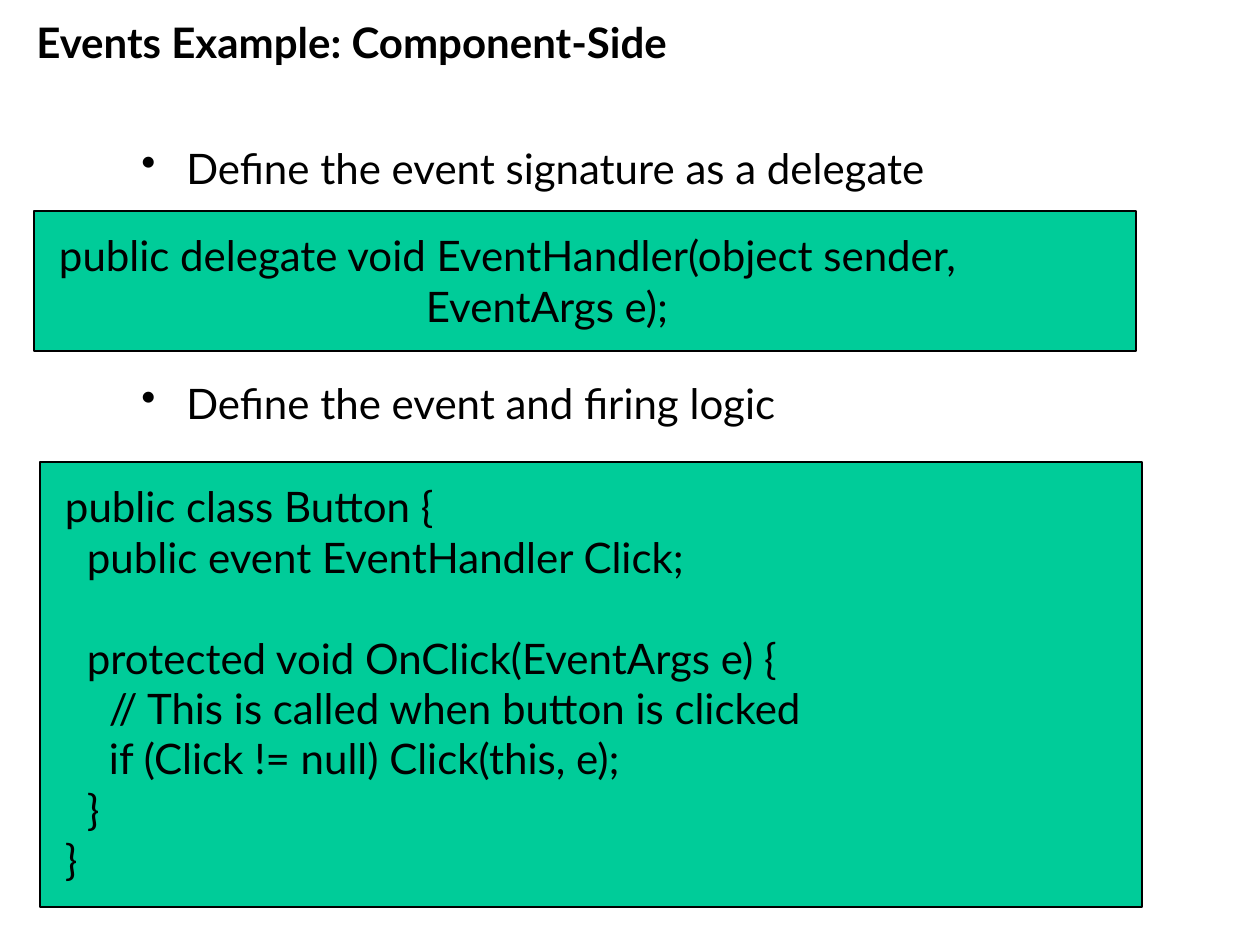
from dataclasses import dataclass

from lxml import etree
from pptx import Presentation
from pptx.dml.color import RGBColor
from pptx.enum.shapes import MSO_SHAPE
from pptx.enum.text import MSO_ANCHOR, PP_ALIGN
from pptx.oxml.ns import qn
from pptx.util import Pt

RECTANGLE = MSO_SHAPE.RECTANGLE
TOP = MSO_ANCHOR.TOP
LEFT = PP_ALIGN.LEFT
EMU_PER_PX = 914400 / 126


@dataclass(frozen=True)
class Theme:
    font: str = "Lato"
    size: int = 24
    line_height: float = 28.8
    ink: RGBColor = RGBColor(0x00, 0x00, 0x00)
    code_fill: RGBColor = RGBColor(0x00, 0xCC, 0x99)
    border: int = 1


THEME = Theme()
CODE_STEP = 22  # one level of code indentation
ARGUMENT_INDENT = 367  # continuation line of the delegate signature
BULLET_INDENT, BULLET_HANG = 48, -45

# Code lines: (indent in px, blank lines above, text)
DELEGATE_CODE = [
    (0, 0, "public delegate void EventHandler(object sender,"),
    (ARGUMENT_INDENT, 0, "EventArgs e);"),
]
BUTTON_CODE = [
    (0, 0, "public class Button {"),
    (CODE_STEP, 0, "public event EventHandler Click;"),
    (CODE_STEP, 1, "protected void OnClick(EventArgs e) {"),
    (2 * CODE_STEP, 0, "// This is called when button is clicked"),
    (2 * CODE_STEP, 0, "if (Click != null) Click(this, e);"),
    (CODE_STEP, 0, "}"),
    (0, 0, "}"),
]
# Bullets: (space above in points, text)
BULLETS = [
    (0, "Define the event signature as a delegate"),
    (105.6, "Define the event and firing logic"),
]


def px(length):
    return round(length * EMU_PER_PX)


def set_format(target, **values):
    for name, value in values.items():
        setattr(target, name, value)


def write_para(frame, index, text, space_before=0, bold=False):
    para = frame.paragraphs[0] if index == 0 else frame.add_paragraph()
    set_format(para, alignment=LEFT, space_before=Pt(space_before))
    span = para.add_run()
    span.text = text
    set_format(span.font, name=THEME.font, size=Pt(THEME.size), bold=bold)
    span.font.color.rgb = THEME.ink
    return para


def indent_para(para, margin, hang=0):
    properties = para._p.get_or_add_pPr()
    properties.set("marL", str(px(margin)))
    properties.set("indent", str(px(hang)))
    return properties


def add_text_frame(page, *bounds):
    frame = page.shapes.add_textbox(*map(px, bounds)).text_frame
    set_format(frame, word_wrap=True, vertical_anchor=TOP)
    return frame


def add_title(page, text):
    write_para(add_text_frame(page, 24, 10, 1223, 126), 0, text, bold=True)


def add_bullets(page, bullets):
    frame = add_text_frame(page, 126, 136, 1008, 672)
    for index, (space_before, text) in enumerate(bullets):
        para = write_para(frame, index, text, space_before)
        properties = indent_para(para, BULLET_INDENT, BULLET_HANG)
        etree.SubElement(properties, qn("a:buChar"), char="•")


def add_code_box(page, bounds, lines):
    box = page.shapes.add_shape(RECTANGLE, *map(px, bounds))
    box.shadow.inherit = False
    box.fill.solid()
    box.fill.fore_color.rgb = THEME.code_fill
    box.line.color.rgb = THEME.ink
    box.line.width = Pt(THEME.border)
    frame = box.text_frame
    set_format(frame, word_wrap=True, vertical_anchor=TOP,
               margin_left=px(25), margin_right=px(25),
               margin_top=px(19), margin_bottom=px(19))
    for index, (indent, blank_lines, text) in enumerate(lines):
        para = write_para(frame, index, text, blank_lines * THEME.line_height)
        indent_para(para, indent)


def main():
    deck = Presentation()
    set_format(deck, slide_width=px(1260), slide_height=px(945))
    page = deck.slides.add_slide(deck.slide_layouts[6])
    add_title(page, "Events Example: Component-Side")
    add_bullets(page, BULLETS)
    add_code_box(page, (34, 211, 1102, 140), DELEGATE_CODE)
    add_code_box(page, (40, 462, 1102, 445), BUTTON_CODE)
    deck.save("out.pptx")


if __name__ == "__main__":
    main()
